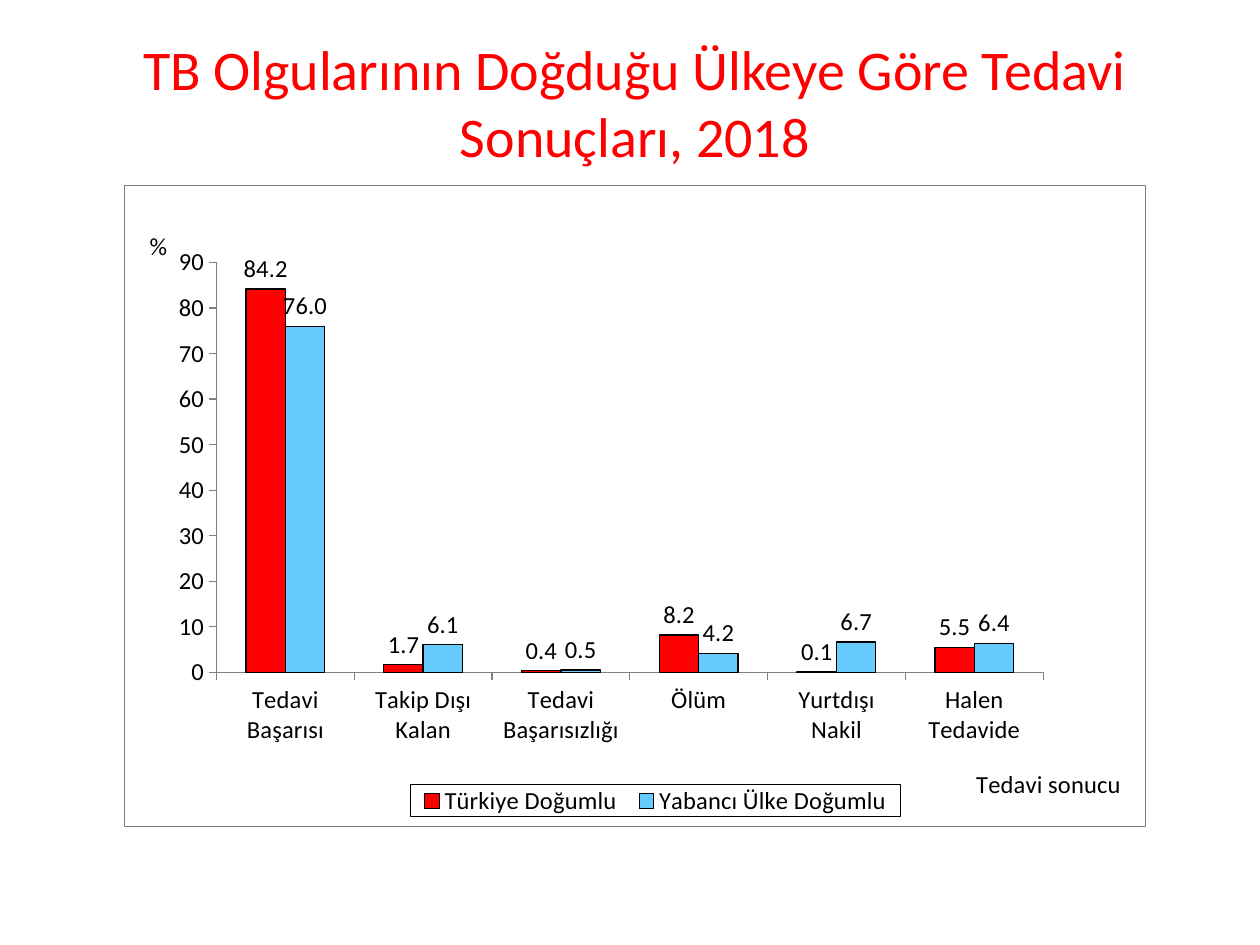
from lxml.etree import SubElement as Sub
from pptx import Presentation
from pptx.chart.data import CategoryChartData as Data
from pptx.dml.color import RGBColor
from pptx.enum.chart import XL_CHART_TYPE as Kind, XL_LABEL_POSITION as Spot
from pptx.enum.chart import XL_LEGEND_POSITION as Side, XL_TICK_MARK as Tick
from pptx.enum.text import MSO_ANCHOR as Anchor, PP_ALIGN as Align
from pptx.oxml import parse_xml
from pptx.oxml.ns import nsdecls, qn
from pptx.util import Pt

SCALE = 914400 / 126
FONT = "Calibri"
RED = RGBColor(255, 0, 0)
BLUE = RGBColor(0x66, 0xCC, 0xFF)
BLACK = RGBColor(0, 0, 0)
GRAY = RGBColor(0x80, 0x80, 0x80)
FRAME = (124, 185, 1022, 642)
GROUPS = ["Tedavi Başarısı", "Takip Dışı Kalan", "Tedavi Başarısızlığı",
          "Ölüm", "Yurtdışı Nakil", "Halen Tedavide"]
SERIES = [
    ("Türkiye Doğumlu", RED, (84.2, 1.7, 0.4, 8.2, 0.1, 5.5)),
    ("Yabancı Ülke Doğumlu", BLUE, (76.0, 6.1, 0.5, 4.2, 6.7, 6.4)),
]


def px(n):
    return round(n * SCALE)


def style(font, size=14, color=BLACK):
    font.name, font.size, font.bold = FONT, Pt(size), False
    font.color.rgb = color


def write(frame, text, align=Align.CENTER, **look):
    par = frame.paragraphs[0]
    par.alignment = align
    run = par.add_run()
    run.text = text
    style(run.font, **look)


def place(node, index, x, y, w=None, h=None, inner=False):
    for old in node.findall(qn("c:layout")):
        node.remove(old)
    layout = parse_xml(f"<c:layout {nsdecls('c')}><c:manualLayout/></c:layout>")
    spec = [("layoutTarget", "inner")] if inner else []
    spec += [("xMode", "edge"), ("yMode", "edge"), ("x", x), ("y", y)]
    if w:
        spec += [("w", w), ("h", h)]
    for tag, value in spec:
        Sub(layout[0], qn(f"c:{tag}")).set("val", str(value))
    node.insert(index, layout)


def border(node, color):
    node.find(qn("c:txPr")).addprevious(parse_xml(
        f'<c:spPr {nsdecls("c", "a")}><a:noFill/><a:ln w="9525"><a:solidFill>'
        f'<a:srgbClr val="{color}"/></a:solidFill></a:ln></c:spPr>'))


def set_axis(axis, text, x, y):
    axis.has_major_gridlines = False
    axis.major_tick_mark, axis.minor_tick_mark = Tick.OUTSIDE, Tick.NONE
    axis.format.line.color.rgb = GRAY
    axis.format.line.width = Pt(0.75)
    style(axis.tick_labels.font)
    title = axis.axis_title
    write(title.text_frame, text)
    body = next(title._element.iter(qn("a:bodyPr")))
    body.set("rot", "0")
    body.set("vert", "horz")
    place(title._element, 1, x, y)


def set_bars(bars, color):
    bars.format.fill.solid()
    bars.format.fill.fore_color.rgb = color
    bars.format.line.color.rgb = BLACK
    bars.format.line.width = Pt(0.75)
    bars.invert_if_negative = False
    tags = bars.data_labels
    tags.show_value = True
    tags.number_format, tags.number_format_is_linked = "0.0", False
    tags.position = Spot.OUTSIDE_END
    style(tags.font)


def set_legend(chart):
    chart.has_legend = True
    legend = chart.legend
    legend.position = Side.RIGHT
    legend.include_in_layout = False
    style(legend.font)
    place(legend._element, 1, 0.28, 0.94, 0.48, 0.05)
    border(legend._element, BLACK)


def add_chart(slide):
    data = Data(number_format="0.0")
    data.categories = GROUPS
    for name, _, values in SERIES:
        data.add_series(name, values)
    box = map(px, FRAME)
    chart = slide.shapes.add_chart(Kind.COLUMN_CLUSTERED, *box, data).chart
    chart.has_title = False
    style(chart.font)
    border(chart._chartSpace, GRAY)
    plot = chart.plots[0]
    plot.gap_width, plot.overlap, plot.vary_by_categories = 150, 0, False
    for bars, (_, color, _) in zip(plot.series, SERIES):
        set_bars(bars, color)
    set_axis(chart.category_axis, "Tedavi sonucu", 0.83, 0.9)
    scale = chart.value_axis
    set_axis(scale, "%", 0.02, 0.06)
    scale.minimum_scale, scale.maximum_scale, scale.major_unit = 0, 90, 10
    scale.tick_labels.number_format = "0"
    scale.tick_labels.number_format_is_linked = False
    area = next(chart._chartSpace.iter(qn("c:plotArea")))
    place(area, 0, 0.09, 0.12, 0.81, 0.64, inner=True)
    set_legend(chart)


def add_title(slide):
    title = slide.shapes.title
    title.left, title.top, title.width, title.height = map(px, (63, 66, 1144, 71))
    frame = title.text_frame
    frame.vertical_anchor = Anchor.MIDDLE
    frame.word_wrap = True
    write(frame, "TB Olgularının Doğduğu Ülkeye Göre Tedavi Sonuçları, 2018",
          size=32, color=RED)


def main():
    deck = Presentation()
    deck.slide_width, deck.slide_height = px(1260), px(945)
    slide = deck.slides.add_slide(deck.slide_layouts[5])
    add_title(slide)
    add_chart(slide)
    deck.save("out.pptx")


if __name__ == "__main__":
    main()
